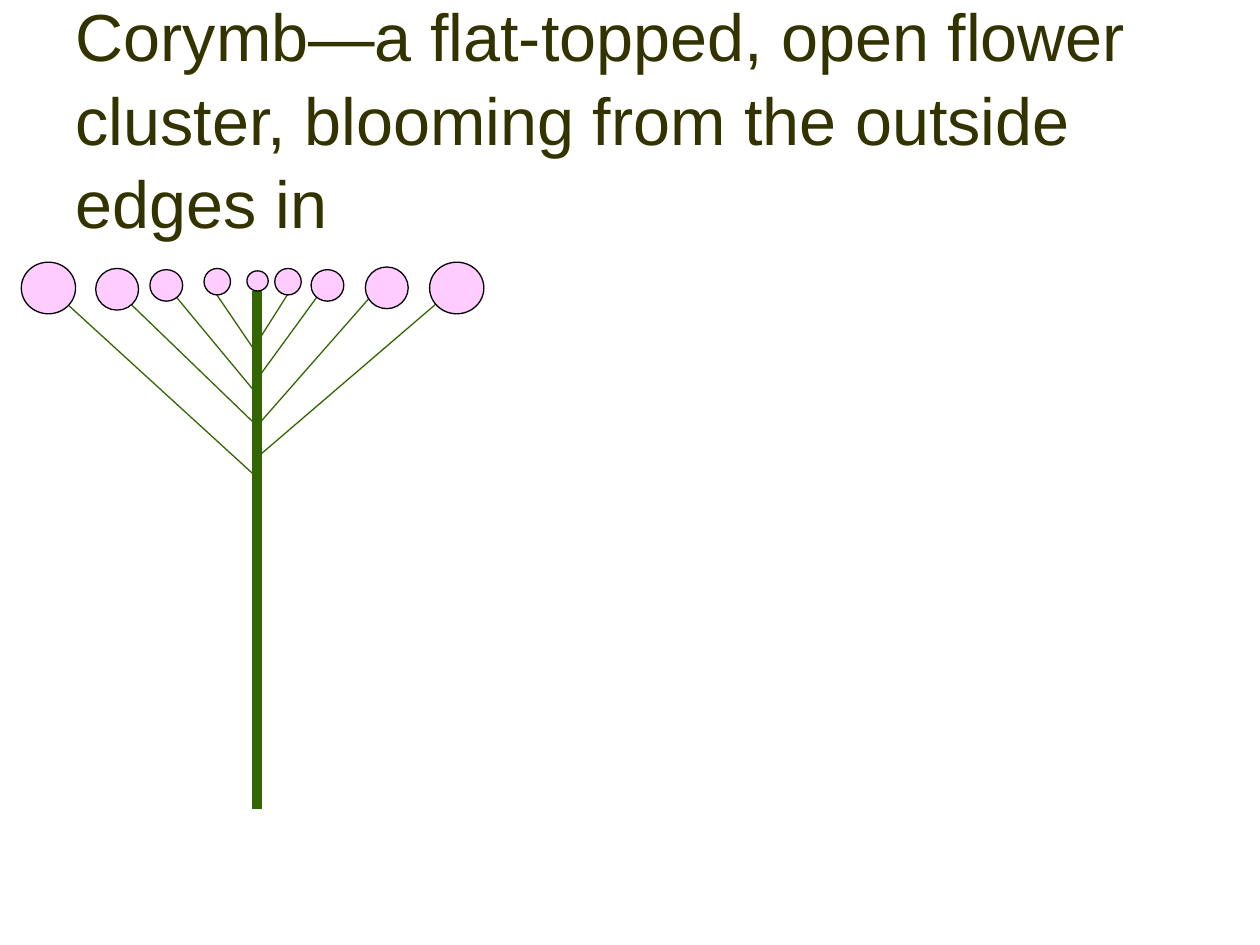
from lxml import etree
from pptx import Presentation
from pptx.dml.color import RGBColor
from pptx.enum import shapes, text
from pptx.oxml import ns
from pptx.util import Pt

OLIVE = RGBColor(0x33, 0x33, 0x00)
GREEN = RGBColor(0x33, 0x66, 0x00)
PINK = RGBColor(0xFF, 0xCC, 0xFF)
BLACK = RGBColor(0, 0, 0)

deck = Presentation()
deck.slide_width, deck.slide_height = Pt(720), Pt(540)
slide = deck.slides.add_slide(deck.slide_layouts[5])


def write(frame, words, size, color, font="Arial", align=text.PP_ALIGN.LEFT, spacing=1.0):
    para = frame.paragraphs[0]
    para.text = words
    para.alignment = align
    para.line_spacing = spacing
    para.font.name, para.font.size = font, Pt(size)
    para.font.color.rgb = color


title = slide.shapes.title
title.left, title.top, title.width, title.height = Pt(36), Pt(21.6), Pt(648), Pt(90)
frame = title.text_frame
frame.word_wrap = True
frame.auto_size = text.MSO_AUTO_SIZE.NONE
frame.vertical_anchor = text.MSO_ANCHOR.MIDDLE
write(frame, "Corymb—a flat-topped, open flower cluster, blooming from the outside edges in",
      size=38, color=OLIVE, spacing=1.05)

plant = slide.shapes.add_group_shape()


def stalk(x1, y1, x2, y2, width=0.75):
    line = plant.shapes.add_connector(
        shapes.MSO_CONNECTOR.STRAIGHT, Pt(x1), Pt(y1), Pt(x2), Pt(y2))
    line.line.color.rgb, line.line.width = GREEN, Pt(width)
    etree.SubElement(line._element.spPr, ns.qn("a:effectLst"))


# The stem and every branch end at the same height
STEM, TOP = 146.9, 166.3
stalk(STEM, TOP, STEM, 462.2, width=6)

# Branches: base x, base y, tip x
for base, low, tip in [
    (STEM, 272.9, 30.2), (STEM, 243.4, 67), (STEM, 225.4, 97.9), (STEM, 202.3, 122.4),
    (STEM, 195.8, 165.6), (149, 213.8, 183.6), (STEM, 243.4, 214.6), (STEM, 261.4, 257.8),
]:
    stalk(base, low, tip, TOP)

# Flower sizes from the oldest, outermost pair to the middle bud
SIZES = [(31, 29.5), (24.5, 23.8), (18.7, 18), (15.1, 15.1), (12.2, 11.5)]
SPOTS = [(12.2, 149.8), (54.7, 153.4), (85.7, 154.1), (116.6, 153.4), (141.1, 154.8),
         (157, 153.4), (177.8, 154.1), (208.8, 152.6), (245.5, 149.8)]
for (left, top), (width, height) in zip(SPOTS, SIZES + SIZES[-2::-1]):
    bloom = plant.shapes.add_shape(
        shapes.MSO_SHAPE.OVAL, Pt(left), Pt(top), Pt(width), Pt(height))
    bloom.shadow.inherit = False
    bloom.fill.solid()
    bloom.fill.fore_color.rgb = PINK
    bloom.line.color.rgb, bloom.line.width = BLACK, Pt(0.75)

deck.save("out.pptx")
